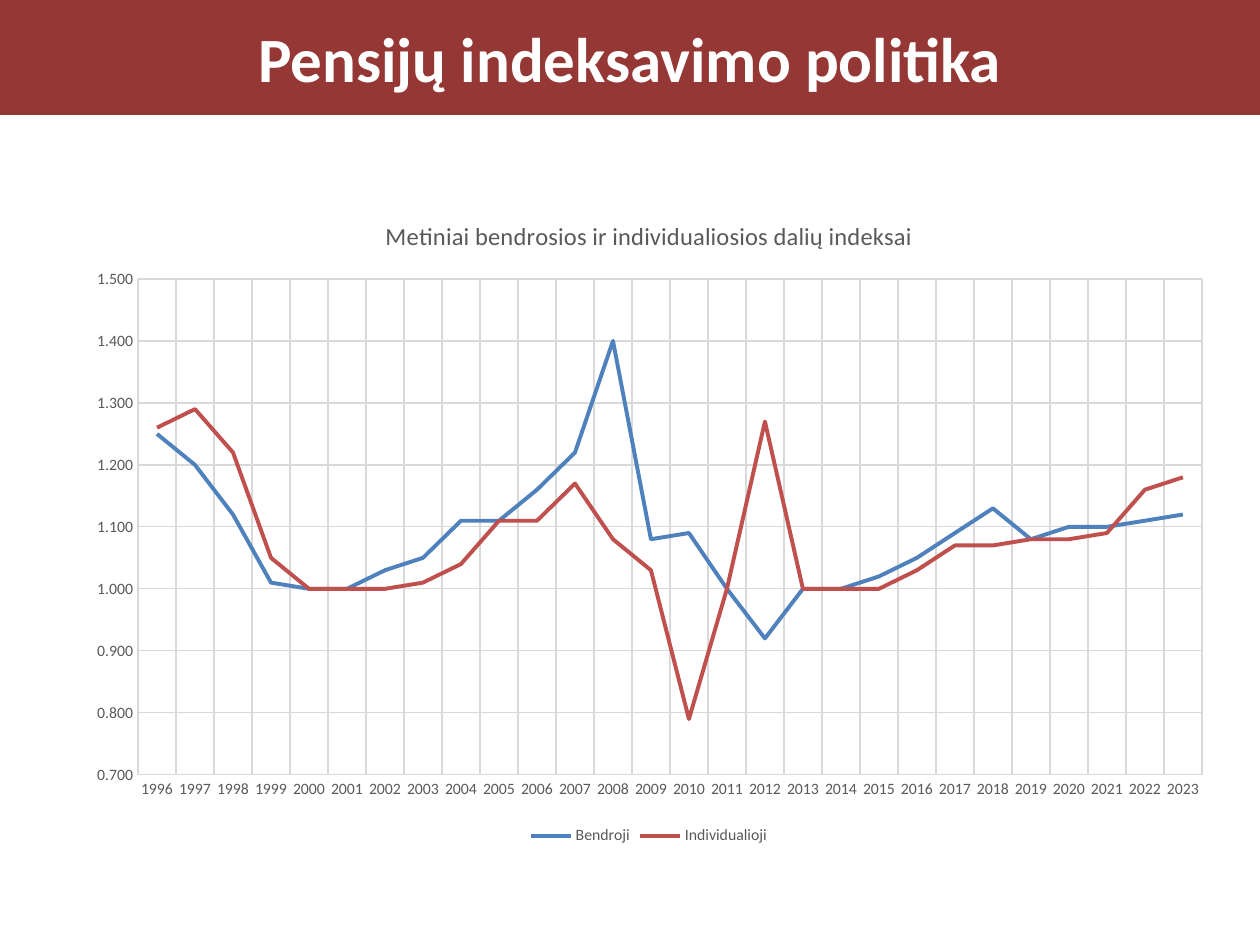
"""Build a slide with a title band and a line chart of yearly pension indices."""
from lxml.etree import SubElement
from pptx import Presentation
from pptx.chart.data import CategoryChartData
from pptx.dml.color import RGBColor
from pptx.enum.chart import XL_CHART_TYPE as ChartType, XL_LEGEND_POSITION as LegendPosition
from pptx.enum.chart import XL_TICK_MARK as TickMark
from pptx.enum.shapes import MSO_SHAPE as Shape
from pptx.enum.text import MSO_ANCHOR as Anchor, PP_ALIGN as Align
from pptx.oxml.ns import qn
from pptx.util import Emu, Pt


def px(count):
    return Emu(round(count * 914400 / 126))


def style_font(font, size, color, bold=False):
    font.name = "Calibri"
    font.size = Pt(size)
    font.bold = bold
    font.color.rgb = RGBColor.from_string(color)


GRAY, GRID = "595959", "D9D9D9"
SERIES = [
    ("Bendroji", "4F81BD",
     [1.25, 1.2, 1.12, 1.01, 1, 1, 1.03, 1.05, 1.11, 1.11, 1.16, 1.22, 1.4, 1.08,
      1.09, 1, 0.92, 1, 1, 1.02, 1.05, 1.09, 1.13, 1.08, 1.1, 1.1, 1.11, 1.12]),
    ("Individualioji", "C0504D",
     [1.26, 1.29, 1.22, 1.05, 1, 1, 1, 1.01, 1.04, 1.11, 1.11, 1.17, 1.08, 1.03,
      0.79, 1, 1.27, 1, 1, 1, 1.03, 1.07, 1.07, 1.08, 1.08, 1.09, 1.16, 1.18]),
]

deck = Presentation()
deck.slide_width, deck.slide_height = px(1260), px(945)
page = deck.slides.add_slide(deck.slide_layouts[6])

band = page.shapes.add_shape(Shape.RECTANGLE, px(0), px(0), px(1260), px(115))
band.shadow.inherit = False
band.fill.solid()
band.fill.fore_color.rgb = RGBColor.from_string("953735")
band.line.fill.background()
band.text_frame.vertical_anchor = Anchor.MIDDLE
heading = band.text_frame.paragraphs[0]
heading.text = "Pensijų indeksavimo politika"
heading.alignment = Align.CENTER
style_font(heading.font, 36, "FFFFFF", bold=True)

data = CategoryChartData(number_format="0.000")
data.categories = [str(year) for year in range(1996, 2024)]
for name, color, values in SERIES:
    data.add_series(name, values)
chart = page.shapes.add_chart(
    ChartType.LINE, px(74), px(195), px(1150), px(655), data).chart
style_font(chart.font, 10, "000000")

chart.has_title = True
caption = chart.chart_title.text_frame.paragraphs[0]
caption.text = "Metiniai bendrosios ir individualiosios dalių indeksai"
style_font(caption.font, 14, GRAY)
chart.chart_title.include_in_layout = False

chart.has_legend = True
chart.legend.position = LegendPosition.BOTTOM
chart.legend.include_in_layout = False
style_font(chart.legend.font, 9, GRAY)

for axis in (chart.category_axis, chart.value_axis):
    axis.major_tick_mark = axis.minor_tick_mark = TickMark.NONE
    axis.has_major_gridlines = True
    for line in (axis.format.line, axis.major_gridlines.format.line):
        line.width = Pt(0.75)
        line.color.rgb = RGBColor.from_string(GRID)
    style_font(axis.tick_labels.font, 9, GRAY)

scale = chart.value_axis
scale.format.line.fill.background()
scale.minimum_scale, scale.maximum_scale, scale.major_unit = 0.7, 1.5, 0.1
scale.tick_labels.number_format = "0.000"
scale.tick_labels.number_format_is_linked = False

chart.plots[0].vary_by_categories = False
for series, (name, color, values) in zip(chart.plots[0].series, SERIES):
    series.smooth = False
    series.format.line.width = Pt(2.25)
    series.format.line.color.rgb = RGBColor.from_string(color)

plot_area = chart.element.find(".//" + qn("c:plotArea"))
for old_layout in plot_area.findall(qn("c:layout")):
    plot_area.remove(old_layout)
layout = SubElement(plot_area, qn("c:layout"))
plot_area.insert(0, layout)
manual = SubElement(layout, qn("c:manualLayout"))
for tag, value in [("layoutTarget", "inner"), ("xMode", "edge"), ("yMode", "edge"),
                   ("x", 64 / 1150), ("y", 84 / 655), ("w", 1064 / 1150), ("h", 496 / 655)]:
    SubElement(manual, qn("c:" + tag)).set("val", str(value))

deck.save("out.pptx")
